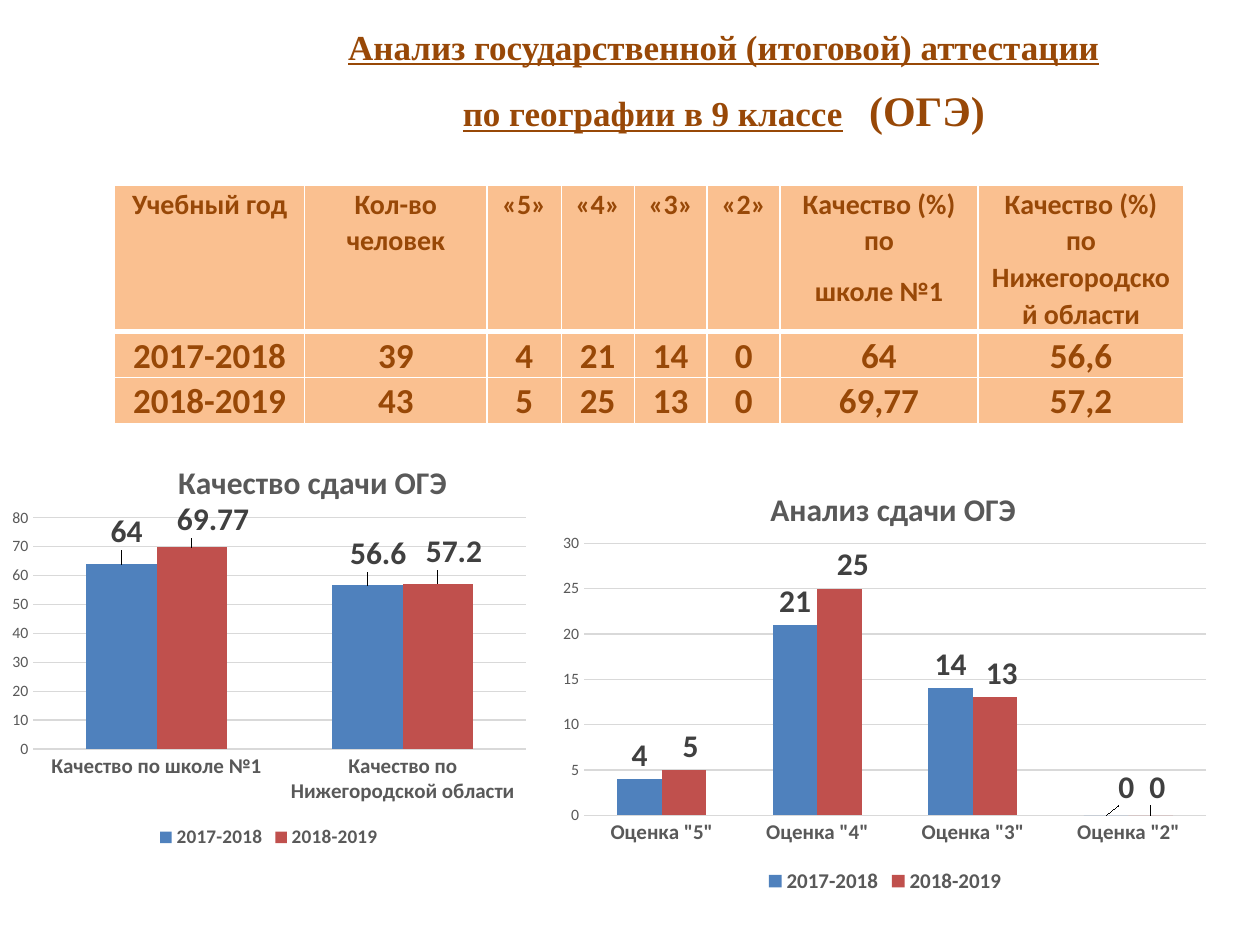
from dataclasses import dataclass

from lxml import etree
from pptx import Presentation
from pptx.chart.data import CategoryChartData
from pptx.dml.color import RGBColor
from pptx.enum.chart import XL_CHART_TYPE, XL_LABEL_POSITION, XL_LEGEND_POSITION, XL_TICK_MARK
from pptx.enum.text import MSO_ANCHOR, MSO_AUTO_SIZE, PP_ALIGN
from pptx.oxml import parse_xml
from pptx.oxml.ns import nsdecls, qn
from pptx.util import Inches, Pt

COLUMN_CLUSTERED = XL_CHART_TYPE.COLUMN_CLUSTERED
OUTSIDE_END = XL_LABEL_POSITION.OUTSIDE_END
LEGEND_BOTTOM = XL_LEGEND_POSITION.BOTTOM
NO_TICK = XL_TICK_MARK.NONE
CENTER = PP_ALIGN.CENTER
TITLE_ONLY = 5
WIDTH, HEIGHT = 10, 7.5


@dataclass(frozen=True)
class Theme:
    heading_font: str = "Times New Roman"
    body_font: str = "Calibri"
    accent: str = "984807"
    cell: str = "FAC090"
    border: str = "FFFFFF"
    grid: str = "D9D9D9"
    chart_text: str = "595959"
    label: str = "404040"
    series: tuple = ("4F81BD", "C0504D")
    heading: int = 20
    exam: int = 24
    table_head: int = 16
    table_body: int = 20
    chart_title: int = 18
    category: int = 12
    tick: int = 9


THEME = Theme()
YEARS = ("2017-2018", "2018-2019")
HEADERS = ("Учебный год", "Кол-во человек", "«5»", "«4»", "«3»", "«2»",
           "Качество (%) по\nшколе №1", "Качество (%) по Нижегородской области")
ROWS = ((YEARS[0], "39", "4", "21", "14", "0", "64", "56,6"),
        (YEARS[1], "43", "5", "25", "13", "0", "69,77", "57,2"))
COLUMN_WIDTHS = (1.51, 1.45, 0.59, 0.58, 0.58, 0.58, 1.57, 1.64)
ROW_HEIGHTS = (1.14, 0.34, 0.34)

# Label shifts are keyed by (series, point), as shares of the chart's size.
QUALITY_CHART = {
    "title": "Качество сдачи ОГЭ", "title_at": (0.32, 0.05),
    "plot": (0.06, 0.2, 0.92, 0.55), "maximum": 80, "step": 10, "legend_size": 11,
    "categories": ("Качество по школе №1", "Качество по Нижегородской области"),
    "values": ((64, 56.6), (69.77, 57.2)),
    "shifts": {(0, 0): (0.01, -0.02), (0, 1): (0.02, -0.02),
               (1, 0): (0.04, -0.01), (1, 1): (0.03, -0.02)},
}
GRADES_CHART = {
    "title": "Анализ сдачи ОГЭ", "title_at": (0.32, 0.05),
    "plot": (0.05, 0.19, 0.93, 0.62), "maximum": 30, "step": 5, "legend_size": 12,
    "categories": tuple(f'Оценка "{grade}"' for grade in (5, 4, 3, 2)),
    "values": ((4, 21, 14, 0), (5, 25, 13, 0)),
    "shifts": {(0, 3): (0.03, -0.01), (1, 0): (0.01, 0), (1, 1): (0.02, 0),
               (1, 2): (0.01, 0), (1, 3): (0.01, -0.01)},
}


def share_box(left, top, width, height):
    """Turn shares of the slide into lengths."""
    return (Inches(left * WIDTH), Inches(top * HEIGHT),
            Inches(width * WIDTH), Inches(height * HEIGHT))


def format_font(font, size, color, **values):
    settings = {"name": THEME.body_font, "size": Pt(size), "bold": True, **values}
    for name, value in settings.items():
        setattr(font, name, value)
    font.color.rgb = RGBColor.from_string(color)


def format_paragraph(paragraph):
    settings = {"alignment": CENTER, "line_spacing": 1.07,
                "space_before": Pt(0), "space_after": Pt(8)}
    for name, value in settings.items():
        setattr(paragraph, name, value)


def add_heading(slide, box):
    title = slide.shapes.title
    title.left, title.top, title.width, title.height = box
    frame = title.text_frame
    frame.word_wrap = True
    frame.auto_size = MSO_AUTO_SIZE.NONE
    frame.vertical_anchor = MSO_ANCHOR.TOP
    lines = (
        (("Анализ государственной (итоговой) аттестации", THEME.heading, True),),
        (("по географии в 9 классе", THEME.heading, True),
         (" ", THEME.heading, False), ("(ОГЭ)", THEME.exam, False)),
    )
    for index, line in enumerate(lines):
        paragraph = frame.add_paragraph() if index else frame.paragraphs[0]
        format_paragraph(paragraph)
        for text, size, underline in line:
            run = paragraph.add_run()
            run.text = text
            format_font(run.font, size, THEME.accent,
                        name=THEME.heading_font, underline=underline)
            if text == " ":
                run.font.size = Pt(size)
                run._r.get_or_add_rPr().set("spc", "1000")


def set_borders(cell, bottom):
    properties = cell._tc.get_or_add_tcPr()
    for index, (side, width) in enumerate((("L", 1), ("R", 1), ("T", 1), ("B", bottom))):
        properties.insert(index, parse_xml(
            f'<a:ln{side} {nsdecls("a")} w="{Pt(width)}"><a:solidFill>'
            f'<a:srgbClr val="{THEME.border}"/></a:solidFill></a:ln{side}>'))


def add_results_table(slide, box):
    table = slide.shapes.add_table(len(ROWS) + 1, len(HEADERS), *box).table
    table.horz_banding = False
    for column, width in zip(table.columns, COLUMN_WIDTHS):
        column.width = int(box[2] * width / sum(COLUMN_WIDTHS))
    for row, height in zip(table.rows, ROW_HEIGHTS):
        row.height = int(box[3] * height / sum(ROW_HEIGHTS))
    for row_index, texts in enumerate((HEADERS, *ROWS)):
        size = THEME.table_body if row_index else THEME.table_head
        for column_index, text in enumerate(texts):
            cell = table.cell(row_index, column_index)
            cell.text = text
            cell.margin_left = cell.margin_right = Inches(0.07)
            cell.margin_top = cell.margin_bottom = 0
            cell.fill.solid()
            cell.fill.fore_color.rgb = RGBColor.from_string(THEME.cell)
            set_borders(cell, bottom=1 if row_index else 3)
            for paragraph in cell.text_frame.paragraphs:
                format_paragraph(paragraph)
                format_font(paragraph.runs[0].font, size, THEME.accent)


def manual_layout(**values):
    layout = parse_xml(f'<c:layout {nsdecls("c")}><c:manualLayout/></c:layout>')
    for name, value in values.items():
        etree.SubElement(layout[0], qn(f"c:{name}")).set("val", str(value))
    return layout


def replace_layout(parent, index, layout):
    for old in parent.findall(qn("c:layout")):
        parent.remove(old)
    parent.insert(index, layout)


def place_title_and_plot(chart, spec_values):
    x, y = spec_values["title_at"]
    replace_layout(chart.chart_title._element, 1,
                   manual_layout(xMode="edge", yMode="edge", x=x, y=y))
    x, y, width, height = spec_values["plot"]
    replace_layout(chart._chartSpace.chart.plotArea, 0,
                   manual_layout(layoutTarget="inner", xMode="edge", yMode="edge",
                                 x=x, y=y, w=width, h=height))


def format_labels(series, shifts):
    labels = series.data_labels
    labels.show_value = True
    labels.position = OUTSIDE_END
    format_font(labels.font, THEME.chart_title, THEME.label)
    for point, (x, y) in shifts.items():
        label = series.points[point].data_label
        format_font(label.font, THEME.chart_title, THEME.label)
        label.position = OUTSIDE_END
        element = series._element.xpath(f".//c:dLbl[c:idx/@val='{point}']")[0]
        replace_layout(element, 1, manual_layout(x=x, y=y))


def add_column_chart(slide, box, content):
    data = CategoryChartData()
    data.categories = content["categories"]
    for year, values in zip(YEARS, content["values"]):
        data.add_series(year, values)
    chart = slide.shapes.add_chart(COLUMN_CLUSTERED, *box, data).chart
    format_font(chart.font, 10, "000000", bold=False)
    chart.has_title = True
    chart.chart_title.text_frame.text = content["title"]
    format_font(chart.chart_title.text_frame.paragraphs[0].runs[0].font,
                THEME.chart_title, THEME.chart_text)
    chart.has_legend = True
    chart.legend.position = LEGEND_BOTTOM
    chart.legend.include_in_layout = False
    format_font(chart.legend.font, content["legend_size"], THEME.chart_text)

    for axis in (chart.category_axis, chart.value_axis):
        axis.major_tick_mark = axis.minor_tick_mark = NO_TICK
        axis.format.line.fill.background()
    format_font(chart.category_axis.tick_labels.font, THEME.category, THEME.chart_text)
    value_axis = chart.value_axis
    format_font(value_axis.tick_labels.font, THEME.tick, THEME.chart_text, bold=False)
    value_axis.minimum_scale, value_axis.maximum_scale = 0, content["maximum"]
    value_axis.major_unit = content["step"]
    grid_line = value_axis.major_gridlines.format.line
    grid_line.width = Pt(0.75)
    grid_line.color.rgb = RGBColor.from_string(THEME.grid)

    plot = chart.plots[0]
    plot.gap_width, plot.overlap, plot.vary_by_categories = 150, 0, False
    for index, series in enumerate(plot.series):
        series.format.fill.solid()
        series.format.fill.fore_color.rgb = RGBColor.from_string(THEME.series[index])
        format_labels(series, {point: shift for (owner, point), shift
                               in content["shifts"].items() if owner == index})
    place_title_and_plot(chart, content)


def main():
    presentation = Presentation()
    presentation.slide_width, presentation.slide_height = Inches(WIDTH), Inches(HEIGHT)
    slide = presentation.slides.add_slide(presentation.slide_layouts[TITLE_ONLY])
    add_heading(slide, share_box(0.177, 0.017, 0.795, 0.131))
    add_results_table(slide, share_box(0.091, 0.196, 0.849, 0.243))
    add_column_chart(slide, share_box(0.001, 0.459, 0.425, 0.445), QUALITY_CHART)
    add_column_chart(slide, share_box(0.437, 0.487, 0.531, 0.464), GRADES_CHART)
    presentation.save("out.pptx")


if __name__ == "__main__":
    main()
